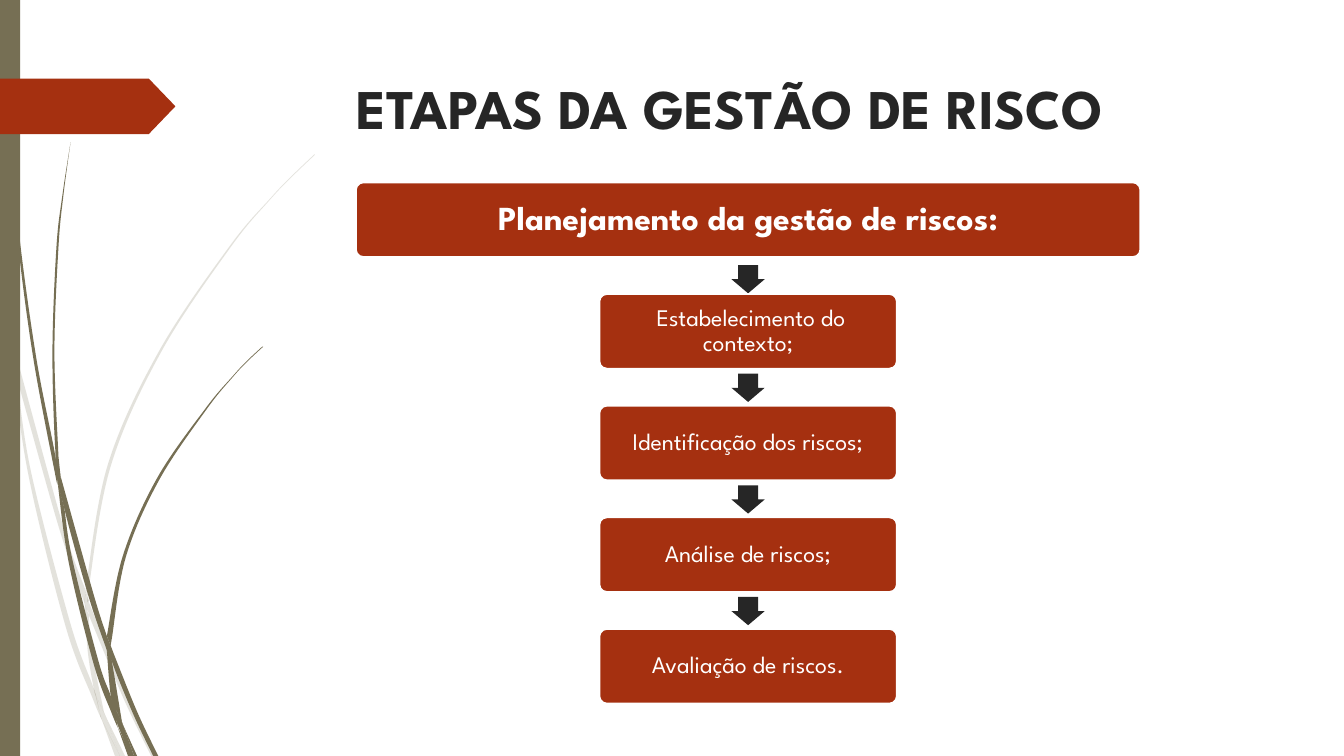
from lxml import etree
from pptx import Presentation, util as u
from pptx.dml.color import RGBColor
from pptx.enum import shapes, text
from pptx.oxml import ns

FONT = "League Spartan"
RUST, OLIVE, INK, WHITE = "A53010", "766F54", "262626", "FFFFFF"

PALE_BLADES = [
    ([(0, 2.99), (0.1, 3.44), (0.11, 3.5)], [(0, 2.82), (0.09, 3.22)]),
    ([(0.17, 3.76), (0.58, 5.22), (0.84, 5.99)], [(0.14, 3.45), (0.62, 5.2), (0.85, 5.86)]),
    ([(0.88, 6.1), (1.23, 6.94), (1.5, 7.5)], [(0.88, 5.96), (0.92, 6.07), (1.27, 6.92), (1.55, 7.5)]),
    ([(1.05, 7.11), (1.19, 7.5)], [(1.24, 7.5)]),
    ([(0.11, 3.5), (0.28, 4.7), (0.65, 6.21), (0.92, 6.93), (1.01, 7.14)],
     [(0.17, 3.76), (0.31, 4.69), (0.7, 6.19), (0.93, 6.83), (0.99, 7.07)]),
    ([(0.84, 5.99), (0.87, 6.46), (0.93, 6.83), (0.96, 6.92), (1.05, 7.11)],
     [(0.88, 6.1), (0.91, 6.46), (1.03, 7.06)]),
    ([(3.12, 1.53), (2.89, 1.75), (2.68, 1.97), (2.28, 2.44), (1.58, 3.48), (1.07, 4.61), (0.85, 5.84)],
     [(3.12, 1.54), (2.9, 1.75), (2.68, 1.98), (2.29, 2.45), (1.6, 3.49), (1.1, 4.62),
      (0.88, 5.84), (0.88, 5.96)]),
    ([(1.01, 7.14), (1.14, 7.5)], [(1.19, 7.5)]),
    ([(0.85, 5.86), (0.84, 5.99), (0.88, 6.08)], [(0.88, 5.96), (0.88, 6.1)]),
    ([(0.93, 6.83), (0.99, 7.07), (1.01, 7.14), (1.19, 7.5)], [(0.96, 6.92), (1.05, 7.11)]),
]
DARK_BLADES = [
    ([(0.03, 0), (0.04, 0.48), (0.07, 1.1), (0.17, 2.33), (0.33, 3.55), (0.56, 4.77)],
     [(0.04, 0), (0.05, 0.48), (0.08, 1.09), (0.19, 2.32), (0.36, 3.55), (0.55, 4.53), (0.57, 4.81)]),
    ([(0.6, 4.72), (0.64, 5.05), (0.88, 5.92), (1.06, 6.45)], [(0.6, 4.72), (0.93, 5.9), (1.06, 6.31)]),
    ([(1.1, 6.41), (1.11, 6.56), (1.32, 7.08), (1.52, 7.5)], [(1.13, 6.49), (1.36, 7.06), (1.57, 7.5)]),
    ([(0.57, 4.77), (0.68, 5.57), (0.93, 6.59), (1.11, 7.08), (1.17, 7.22)],
     [(0.64, 5.05), (0.72, 5.56), (0.98, 6.57), (1.1, 6.91), (1.16, 7.17)]),
    ([(0.7, 1.41), (0.62, 1.93), (0.56, 2.45), (0.52, 3.49), (0.55, 4.49), (0.6, 4.72)],
     [(0.7, 1.41), (0.63, 1.93), (0.58, 2.45), (0.54, 3.49), (0.58, 4.53)]),
    ([(1.22, 7.19), (1.33, 7.5)], [(1.36, 7.5)]),
    ([(0.55, 4.49), (0.57, 4.77), (0.64, 5.05)], [(0.6, 4.72)]),
    ([(2.6, 3.44), (2.45, 3.58), (2.31, 3.73), (2.04, 4.05), (1.56, 4.74), (1.22, 5.51), (1.06, 6.31)],
     [(2.61, 3.44), (2.45, 3.59), (2.31, 3.74), (2.05, 4.06), (1.58, 4.76), (1.25, 5.52),
      (1.11, 6.33), (1.1, 6.41)]),
    ([(1.17, 7.22), (1.27, 7.5)], [(1.31, 7.5)]),
    ([(1.06, 6.45), (1.1, 6.91), (1.16, 7.06), (1.22, 7.19)], [(1.09, 6.51), (1.11, 6.56), (1.21, 7.16)]),
    ([(1.06, 6.31), (1.06, 6.45), (1.11, 6.56)], [(1.1, 6.41)]),
    ([(1.1, 6.91), (1.16, 7.17), (1.3, 7.5)], [(1.16, 7.06), (1.22, 7.19), (1.33, 7.5)]),
]
STEPS = [" Estabelecimento do contexto;", "Identificação dos riscos;",
         "Análise de riscos;", "Avaliação de riscos."]


def color(value):
    """Turn a hex string into a colour."""
    return RGBColor.from_string(value)


def paint(shape, fill, edge=None):
    """Give a shape a flat fill and an optional outline."""
    shape.shadow.inherit = False
    shape.fill.solid()
    shape.fill.fore_color.rgb = color(fill)
    if edge:
        shape.line.color.rgb = color(edge)
        shape.line.width = u.Pt(1.25)
    else:
        shape.line.fill.background()


def add_preset(slide, kind, box, fill, edge=None, adjust=()):
    """Add a painted preset shape in a box given in inches."""
    shape = slide.shapes.add_shape(kind, *map(u.Inches, box))
    for index, value in enumerate(adjust):
        shape.adjustments[index] = value
    paint(shape, fill, edge)
    return shape


def write(shape, words, size, ink, bold=False):
    """Write one centred paragraph."""
    shape.text_frame.text = words
    paragraph = shape.text_frame.paragraphs[0]
    paragraph.alignment = text.PP_ALIGN.CENTER
    font = paragraph.font
    font.name, font.size, font.bold = FONT, u.Pt(size), bold
    font.color.rgb = color(ink)
    return paragraph


def bend(segment, before, start, end, after):
    """Turn a straight path segment into a smooth cubic one."""
    segment.tag = ns.qn("a:cubicBezTo")
    leave = [s + (e - b) / 6 for b, s, e in zip(before, start, end)]
    arrive = [e - (a - s) / 6 for s, e, a in zip(start, end, after)]
    for index, (x, y) in enumerate((leave, arrive)):
        point = etree.Element(ns.qn("a:pt"), x=str(round(x)), y=str(round(y)))
        segment.insert(index, point)


def add_blade(slide, left, right, opacity):
    """Draw a grass blade between its left and right edges."""
    outline = [(u.Inches(x), u.Inches(y)) for x, y in left + right[::-1]]
    builder = slide.shapes.build_freeform(*outline[0])
    builder.add_line_segments(outline[1:], close=True)
    blade = builder.convert_to_shape()
    paint(blade, OLIVE)
    local = [(x - blade.left, y - blade.top) for x, y in outline]
    segments = list(blade._element.iter(ns.qn("a:lnTo")))
    turn = len(left)
    for first, last in ((0, turn - 1), (turn, len(local) - 1)):
        for i in range(first, last):
            bend(segments[i], local[max(i - 1, first)], local[i],
                 local[i + 1], local[min(i + 2, last)])
    if opacity < 100:
        hue = blade._element.spPr.find(".//" + ns.qn("a:srgbClr"))
        etree.SubElement(hue, ns.qn("a:alpha"), val=str(opacity * 1000))


def add_side_decor(slide, height):
    """Draw the grass, the side bar and the tag on the left edge."""
    for blades, opacity in ((PALE_BLADES, 20), (DARK_BLADES, 100)):
        for left, right in blades:
            add_blade(slide, left, right, opacity)
    add_preset(slide, shapes.MSO_SHAPE.RECTANGLE, (0, 0, 0.2, height), OLIVE)
    add_preset(slide, shapes.MSO_SHAPE.PENTAGON, (0, 0.78, 1.74, 0.55), RUST, adjust=[0.48])


def add_title(slide, box, words):
    """Place and format the slide title."""
    title = slide.shapes.title
    title.left, title.top, title.width, title.height = map(u.Inches, box)
    write(title, words, 40, INK, bold=True)
    title.text_frame.vertical_anchor = text.MSO_ANCHOR.TOP
    title.text_frame.auto_size = text.MSO_AUTO_SIZE.NONE


def add_card(slide, box, words, size, inset, bold=False):
    """Add a rounded card with centred text."""
    card = add_preset(slide, shapes.MSO_SHAPE.ROUNDED_RECTANGLE, box, RUST, WHITE, [0.1])
    frame = card.text_frame
    frame.word_wrap = True
    frame.vertical_anchor = text.MSO_ANCHOR.MIDDLE
    frame.margin_left = frame.margin_right = u.Inches(inset)
    frame.margin_top = frame.margin_bottom = u.Inches(inset)
    write(card, words, size, WHITE, bold).line_spacing = 0.9


def add_flow(slide, box, heading, steps):
    """Stack a heading card and the steps, with a down arrow before each step."""
    left, top, width, height = box
    card_height, step_width, arrow_width, arrow_height = 0.74, 2.95, 0.33, 0.28
    pitch = (height - card_height) / len(steps)
    center = left + width / 2
    add_card(slide, (left, top, width, card_height), heading, 24, 0.12, bold=True)
    for number, step in enumerate(steps, 1):
        step_top = top + number * pitch
        drop = 0.08 if number == 1 else 0.05
        arrow_top = step_top - pitch + card_height + drop
        add_preset(slide, shapes.MSO_SHAPE.DOWN_ARROW,
                   (center - arrow_width / 2, arrow_top, arrow_width, arrow_height),
                   INK, adjust=[0.6, 0.5])
        add_card(slide, (center - step_width / 2, step_top, step_width, card_height),
                 step, 17, 0.09)


def main():
    """Build and save the slide."""
    deck = Presentation()
    deck.slide_width, deck.slide_height = u.Inches(13.33), u.Inches(7.5)
    slide = deck.slides.add_slide(deck.slide_layouts[5])
    add_side_decor(slide, 7.5)
    add_title(slide, (2.17, 0.68, 10.14, 0.98), "ETAPAS DA GESTÃO DE RISCO")
    add_flow(slide, (3.53, 1.81, 7.78, 5.17), "Planejamento da gestão de riscos:", STEPS)
    deck.save("out.pptx")


if __name__ == "__main__":
    main()
